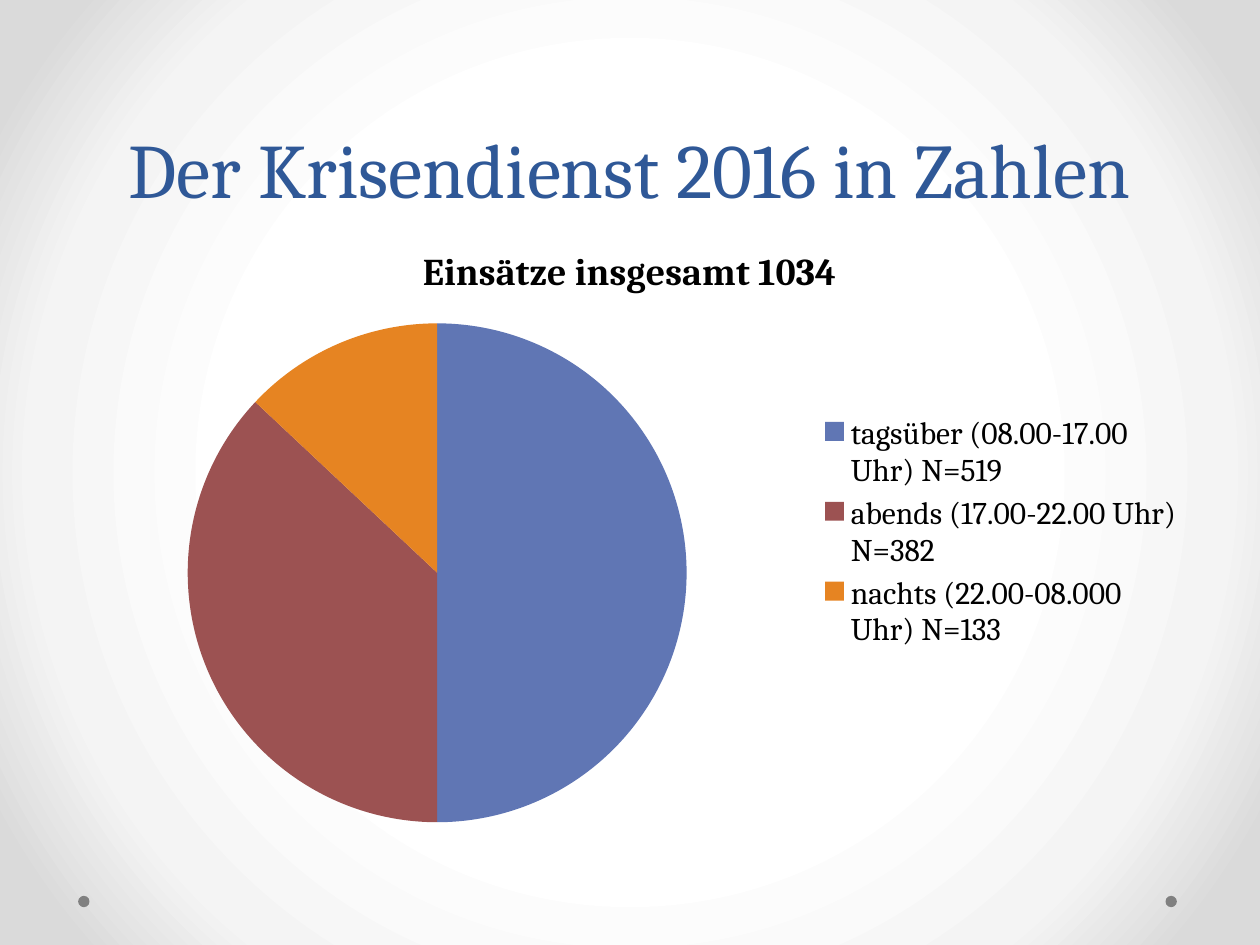
from lxml import etree
from pptx import Presentation
from pptx.chart.data import CategoryChartData
from pptx.dml.color import RGBColor
from pptx.enum.chart import XL_CHART_TYPE, XL_LEGEND_POSITION
from pptx.enum.shapes import MSO_SHAPE
from pptx.enum.text import MSO_ANCHOR, PP_ALIGN
from pptx.oxml import parse_xml
from pptx.oxml.ns import nsdecls, qn
from pptx.util import Inches, Pt

PIE = XL_CHART_TYPE.PIE
RIGHT = XL_LEGEND_POSITION.RIGHT
OVAL = MSO_SHAPE.OVAL
BOTTOM = MSO_ANCHOR.BOTTOM
CENTER = PP_ALIGN.CENTER

FONT = "Cambria"
TITLE_ONLY = 5
COLORS = {
    "title": "2F5897", "text": "000000", "dot": "808080",
    "day": "6076B4", "evening": "9C5252", "night": "E68422",
}
BACKGROUND_STOPS = [(50, "FFFFFF"), (76, "F4F4F4"), (92, "DADADA")]
PLOT_AREA = {"x": 0.11, "y": 0.16, "w": 0.44, "h": 0.81}
SHIFTS = [
    ("tagsüber (08.00-17.00 Uhr) N=519", 50, "day"),
    ("abends (17.00-22.00 Uhr) N=382", 37, "evening"),
    ("nachts (22.00-08.000 Uhr) N=133", 13, "night"),
]


class SlideBuilder:
    def __init__(self, slide):
        self.slide = slide

    def color(self, name):
        return RGBColor.from_string(COLORS[name])

    def style(self, font, color, **values):
        for name, value in {"name": FONT, **values}.items():
            setattr(font, name, value)
        font.color.rgb = self.color(color)

    def background(self, stops):
        gs = "".join(f'<a:gs pos="{pos * 1000}"><a:srgbClr val="{rgb}"/></a:gs>'
                     for pos, rgb in stops)
        bg = parse_xml(
            f'<p:bg {nsdecls("p", "a")}><p:bgPr><a:gradFill><a:gsLst>{gs}</a:gsLst>'
            '<a:path path="circle"><a:fillToRect l="50000" t="50000" r="50000" b="50000"/>'
            '</a:path></a:gradFill><a:effectLst/></p:bgPr></p:bg>')
        self.slide.element.cSld.insert(0, bg)

    def dot(self, x, y, size):
        sp = self.slide.shapes.add_shape(OVAL, Inches(x), Inches(y), Inches(size), Inches(size))
        sp.shadow.inherit = False
        sp.fill.solid()
        sp.fill.fore_color.rgb = self.color("dot")
        sp.line.fill.background()

    def title(self, text, x, y, w, h):
        sp = self.slide.shapes.title
        sp.left, sp.top, sp.width, sp.height = map(Inches, (x, y, w, h))
        tf = sp.text_frame
        tf.vertical_anchor = BOTTOM
        p = tf.paragraphs[0]
        p.alignment = CENTER
        p.line_spacing = Pt(58)
        r = p.add_run()
        r.text = text
        self.style(r.font, "title", size=Pt(44))

    def pie(self, title, rows, x, y, w, h):
        data = CategoryChartData()
        data.categories = [label for label, _, _ in rows]
        data.add_series(title, [value for _, value, _ in rows])
        frame = self.slide.shapes.add_chart(PIE, *map(Inches, (x, y, w, h)), data)
        chart = frame.chart
        self.style(chart.font, "text", size=Pt(18))

        # Chart title and legend
        chart.has_title = True
        tf = chart.chart_title.text_frame
        tf.text = title
        self.style(tf.paragraphs[0].runs[0].font, "text", size=Pt(21.6), bold=True)
        chart.has_legend = True
        chart.legend.position = RIGHT
        chart.legend.include_in_layout = False

        # Slice colours
        plot = chart.plots[0]
        plot.vary_by_categories = True
        for i, (_, _, color) in enumerate(rows):
            fill = plot.series[0].points[i].format.fill
            fill.solid()
            fill.fore_color.rgb = self.color(color)
        self.place_plot(chart)

    def place_plot(self, chart):
        area = chart.element.find(".//" + qn("c:plotArea"))
        for old in area.findall(qn("c:layout")):
            area.remove(old)
        layout = etree.Element(qn("c:layout"))
        manual = etree.SubElement(layout, qn("c:manualLayout"))
        values = {"layoutTarget": "inner", "xMode": "edge", "yMode": "edge", **PLOT_AREA}
        for name, value in values.items():
            etree.SubElement(manual, qn(f"c:{name}"), val=str(value))
        area.insert(0, layout)


def main():
    prs = Presentation()
    prs.slide_width, prs.slide_height = Inches(10), Inches(7.5)
    s = SlideBuilder(prs.slides.add_slide(prs.slide_layouts[TITLE_ONLY]))

    # Backdrop with the two corner dots
    s.background(BACKGROUND_STOPS)
    for x in (9.25, 0.62):
        s.dot(x, 7.11, 0.09)

    # Title and chart
    s.title("Der Krisendienst 2016 in Zahlen", 0.5, 0, 9, 1.75)
    s.pie("Einsätze insgesamt 1034", SHIFTS, 0.5, 1.75, 9, 4.95)

    prs.save("out.pptx")


if __name__ == "__main__":
    main()
